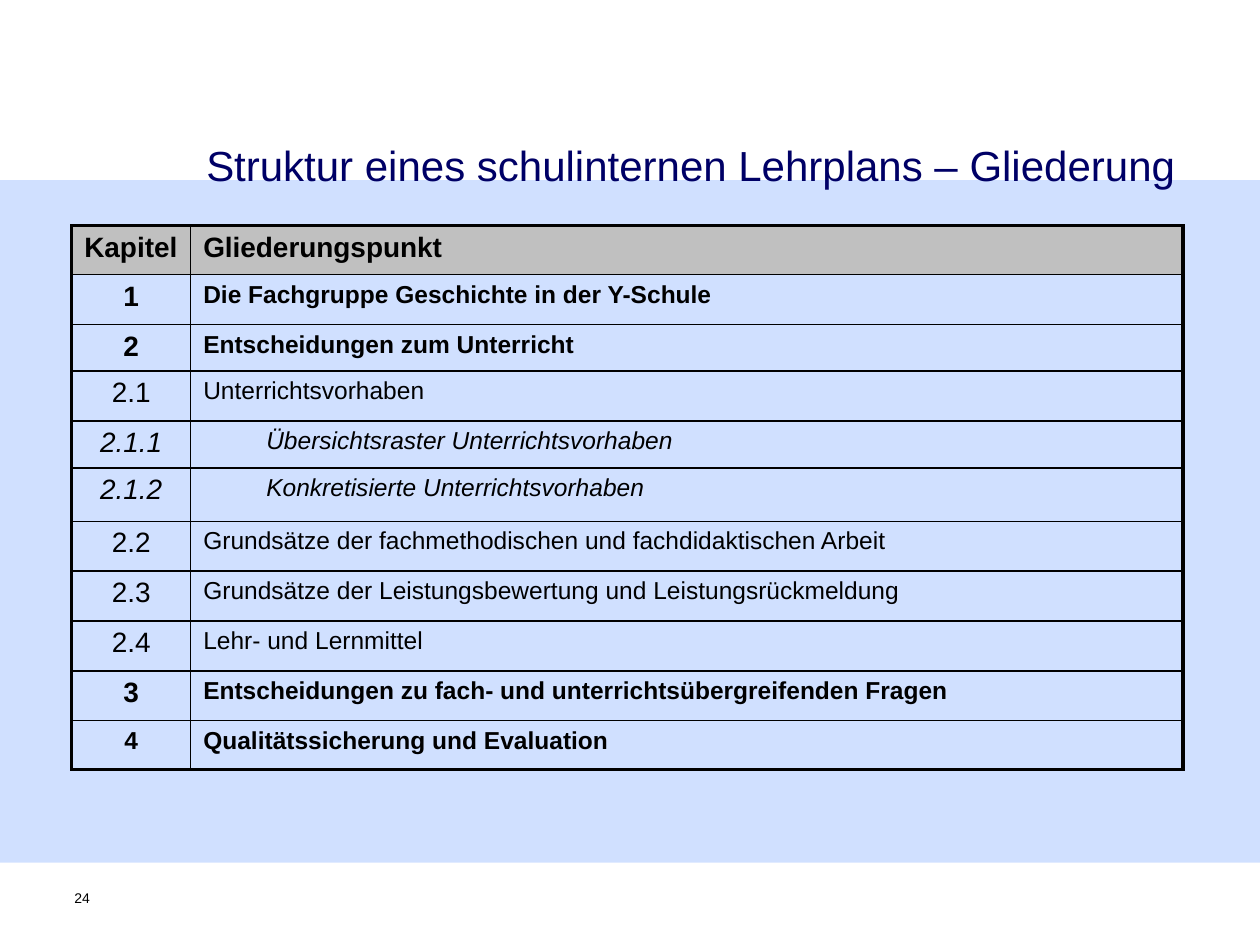
from lxml import etree
from pptx import Presentation
from pptx import util as u
from pptx.dml.color import RGBColor
from pptx.enum import shapes, text
from pptx.oxml.ns import qn

ROW_HEIGHTS = [28, 28.5, 26.5, 28.5, 27, 30.5, 28.5, 28.5, 28.5, 28.5, 28]
COLUMN_WIDTHS = [68, 567]
CHAPTERS = [
    ("1", "Die Fachgruppe Geschichte in der Y-Schule"),
    ("2", "Entscheidungen zum Unterricht"),
    ("2.1", "Unterrichtsvorhaben"),
    ("2.1.1", "Übersichtsraster Unterrichtsvorhaben"),
    ("2.1.2", "Konkretisierte Unterrichtsvorhaben"),
    ("2.2", "Grundsätze der fachmethodischen und fachdidaktischen Arbeit"),
    ("2.3", "Grundsätze der Leistungsbewertung und Leistungsrückmeldung"),
    ("2.4", "Lehr- und Lernmittel"),
    ("3", "Entscheidungen zu fach- und unterrichtsübergreifenden Fragen"),
    ("4", "Qualitätssicherung und Evaluation"),
]


def color(value):
    return RGBColor.from_string(value)


def write(frame, content, size, ink="000000", bold=False, italic=False,
          align=text.PP_ALIGN.LEFT, level=0):
    para = frame.paragraphs[0]
    para.alignment = align
    if level:
        para.level = level
        para._p.get_or_add_pPr().set("marL", str(u.Pt(36 * level)))
    span = para.add_run()
    span.text = content
    span.font.name = "Arial"
    span.font.size = u.Pt(size)
    span.font.bold = bold
    span.font.italic = italic
    span.font.color.rgb = color(ink)


def add_band(page, left, top, width, height, fill, opacity):
    band = page.shapes.add_shape(shapes.MSO_SHAPE.RECTANGLE, u.Pt(left),
                                 u.Pt(top), u.Pt(width), u.Pt(height))
    band.shadow.inherit = False
    band.line.fill.background()
    band.fill.solid()
    band.fill.fore_color.rgb = color(fill)
    tint = band.fill._xPr.find(qn("a:solidFill"))[0]
    etree.SubElement(tint, qn("a:alpha"), val=str(opacity * 1000))


def add_text(page, content, left, top, width, height, size, inset_top=0, **style):
    box = page.shapes.add_textbox(u.Pt(left), u.Pt(top), u.Pt(width), u.Pt(height))
    frame = box.text_frame
    frame.word_wrap = True
    frame.margin_left = frame.margin_right = frame.margin_bottom = 0
    frame.margin_top = u.Pt(inset_top)
    write(frame, content, size, **style)


def add_border(cell, side, weight):
    line = etree.SubElement(cell._tc.get_or_add_tcPr(), qn(f"a:ln{side}"),
                            w=str(u.Pt(weight)))
    fill = etree.SubElement(line, qn("a:solidFill"))
    etree.SubElement(fill, qn("a:srgbClr"), val="000000")


def frame_cell(cell, row, column):
    outer = {
        "L": column == 0,
        "R": column == len(COLUMN_WIDTHS) - 1,
        "T": row == 0,
        "B": row == len(ROW_HEIGHTS) - 1,
    }
    for side, is_outer in outer.items():
        add_border(cell, side, 2.25 if is_outer else 1)
    if row == 0:
        cell.fill.solid()
        cell.fill.fore_color.rgb = color("C0C0C0")
    else:
        cell.fill.background()


def add_outline_table(page, left, top):
    table = page.shapes.add_table(
        len(ROW_HEIGHTS), len(COLUMN_WIDTHS), u.Pt(left), u.Pt(top),
        u.Pt(sum(COLUMN_WIDTHS)), u.Pt(sum(ROW_HEIGHTS))).table
    table.horz_banding = False
    for column, width in zip(table.columns, COLUMN_WIDTHS):
        column.width = u.Pt(width)
    for index, height in enumerate(ROW_HEIGHTS):
        table.rows[index].height = u.Pt(height)
        for column in range(len(COLUMN_WIDTHS)):
            frame_cell(table.cell(index, column), index, column)

    for column, heading in enumerate(("Kapitel", "Gliederungspunkt")):
        write(table.cell(0, column).text_frame, heading, 16, bold=True)
    for row, (number, title) in enumerate(CHAPTERS, start=1):
        depth = number.count(".")
        style = {"bold": depth == 0, "italic": depth == 2}
        write(table.cell(row, 0).text_frame, number, 14 if number == "4" else 16,
              align=text.PP_ALIGN.CENTER, **style)
        write(table.cell(row, 1).text_frame, title, 14,
              level=1 if depth == 2 else 0, **style)


def main():
    deck = Presentation()
    deck.slide_width, deck.slide_height = u.Pt(720), u.Pt(540)
    page = deck.slides.add_slide(deck.slide_layouts[6])
    add_band(page, 0, 103, 720, 390, "6699FF", 30)
    add_text(page, "Struktur eines schulinternen Lehrplans – Gliederung",
             36.5, 77, 635, 39, 24, inset_top=3, ink="000066",
             align=text.PP_ALIGN.RIGHT)
    add_outline_table(page, 41, 129)
    add_text(page, "24", 42.5, 508.5, 23, 26.5, 8)
    deck.save("out.pptx")


if __name__ == "__main__":
    main()
